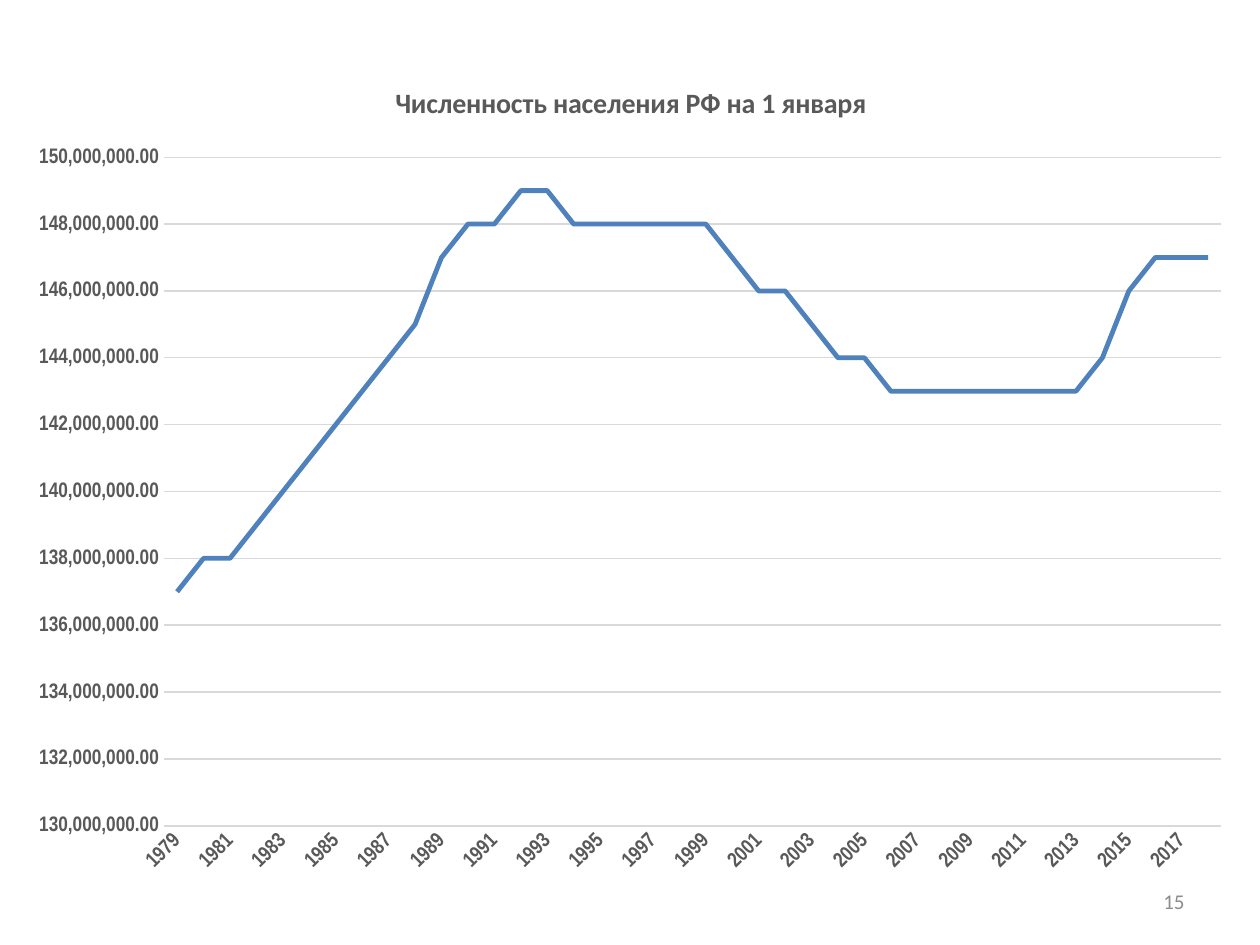
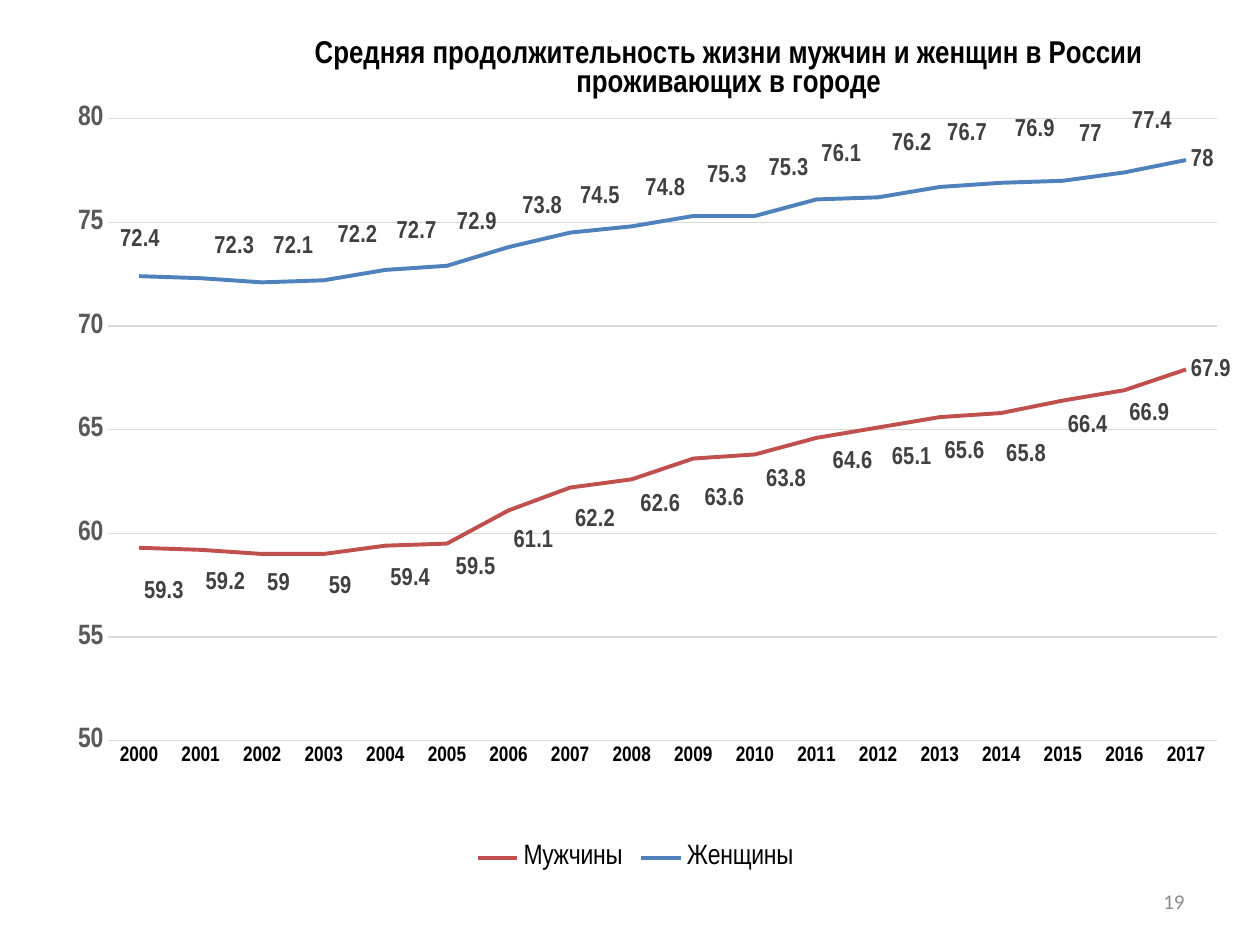
from dataclasses import dataclass

from lxml.etree import SubElement
from pptx import Presentation
from pptx.chart.data import CategoryChartData as Data
from pptx.dml.color import RGBColor
from pptx.enum.chart import XL_CHART_TYPE as Kind
from pptx.enum.chart import XL_LABEL_POSITION as Side
from pptx.enum.chart import XL_LEGEND_POSITION as Dock
from pptx.enum.chart import XL_TICK_MARK as Tick
from pptx.enum.text import MSO_ANCHOR as Anchor
from pptx.enum.text import PP_ALIGN as Align
from pptx.oxml.ns import qn
from pptx.util import Inches, Pt


@dataclass(frozen=True)
class Theme:
    body: str = "Calibri"
    narrow: str = "Arial Narrow"
    black: str = "000000"
    gray: str = "595959"
    dark: str = "404040"
    pale: str = "8C8C8C"
    grid: str = "D9D9D9"
    blue: str = "4F81BD"
    red: str = "C0504D"
    tiny: int = 10
    small: int = 12
    label: int = 14
    mid: int = 16
    large: int = 18


T = Theme()
C15 = "http://schemas.microsoft.com/office/drawing/2012/chart"
EXT = "{CE6537A1-D6FC-4f65-9D91-7224C49458BB}"

# Population in millions, from 1979 on
PEOPLE = [
    137, 138, 138, 139, 140, 141, 142, 143, 144, 145,
    147, 148, 148, 149, 149, 148, 148, 148, 148, 148,
    148, 147, 146, 146, 145, 144, 144, 143, 143, 143,
    143, 143, 143, 143, 143, 144, 146, 147, 147, 147,
]

MEN = [59.3, 59.2, 59, 59, 59.4, 59.5, 61.1, 62.2, 62.6,
       63.6, 63.8, 64.6, 65.1, 65.6, 65.8, 66.4, 66.9, 67.9]
WOMEN = [72.4, 72.3, 72.1, 72.2, 72.7, 72.9, 73.8, 74.5, 74.8,
         75.3, 75.3, 76.1, 76.2, 76.7, 76.9, 77, 77.4, 78]

# Label shifts in inches (across, down); the last label stays in place
MEN_SHIFT = [
    (0, .35), (0, .26), (0, .24), (0, .26), (0, .26), (.03, .19),
    (0, .24), (0, .26), (.03, .2), (.05, .32), (.05, .2), (.09, .19),
    (.07, .24), (0, .28), (0, .33), (0, .2), (0, .19),
]
WOMEN_SHIFT = [
    (-.19, -.29), (.07, -.25), (.05, -.28), (.07, -.35), (.05, -.3), (.04, -.34),
    (.07, -.32), (.04, -.28), (.07, -.3), (.07, -.32), (.07, -.37), (0, -.35),
    (.07, -.42), (.02, -.42), (.07, -.42), (.09, -.36), (.02, -.4),
]


def style(font, size, color, bold=False, face=T.narrow):
    font.size, font.bold, font.name = Pt(size), bold, face
    font.color.rgb = RGBColor.from_string(color)


def stroke(line, color, width):
    line.color.rgb = RGBColor.from_string(color)
    line.width = Pt(width)


def place(node, index, inner=False, edge=True, **parts):
    """Give a chart part a manual layout, in fractions of the chart."""
    for old in node.findall(qn("c:layout")):
        node.remove(old)
    layout = SubElement(node, qn("c:layout"))
    node.insert(index, layout)
    manual = SubElement(layout, qn("c:manualLayout"))
    if inner:
        SubElement(manual, qn("c:layoutTarget")).set("val", "inner")
    if edge:
        for name in ("xMode", "yMode"):
            SubElement(manual, qn(f"c:{name}")).set("val", "edge")
    for name, value in parts.items():
        SubElement(manual, qn(f"c:{name}")).set("val", f"{value:.4f}")


def add_title(chart, lines, size, color, face, x, y):
    chart.has_title = True
    frame = chart.chart_title.text_frame
    frame.text = "\n".join(lines)
    for para in frame.paragraphs:
        para.alignment = Align.CENTER
        style(para.runs[0].font, size, color, True, face)
    place(chart.chart_title._element, 1, x=x, y=y)


def set_axes(chart, low, high, step, size, form, ink, width):
    years, scale = chart.category_axis, chart.value_axis
    for axis in (years, scale):
        axis.major_tick_mark = axis.minor_tick_mark = Tick.NONE
    style(years.tick_labels.font, T.small, ink, True)
    stroke(years.format.line, T.grid, width)
    style(scale.tick_labels.font, size, T.gray, True)
    scale.tick_labels.number_format = form
    scale.tick_labels.number_format_is_linked = False
    scale.minimum_scale, scale.maximum_scale = low, high
    scale.major_unit = step
    scale.format.line.fill.background()
    stroke(scale.major_gridlines.format.line, T.grid, .75)


def add_lines(slide, box, first, rows, width):
    """Add a line chart whose rows are (name, values, color)."""
    data = Data()
    data.categories = [str(first + i) for i in range(len(rows[0][1]))]
    for name, values, _ in rows:
        data.add_series(name, values)
    chart = slide.shapes.add_chart(Kind.LINE, *map(Inches, box), data).chart
    style(chart.font, T.tiny, T.black, face=T.body)
    chart.has_legend = False
    chart.plots[0].vary_by_categories = False
    for line, (_, _, color) in zip(chart.plots[0].series, rows):
        line.smooth = False
        stroke(line.format.line, color, width)
    return chart


def hide_leaders(labels):
    """Turn off the lines that join moved labels to their points."""
    for flag in labels.findall(qn("c:showLeaderLines")):
        flag.set("val", "0")
    group = SubElement(labels, qn("c:extLst"))
    ext = SubElement(group, qn("c:ext"), nsmap={"c15": C15})
    ext.set("uri", EXT)
    SubElement(ext, f"{{{C15}}}showLeaderLines").set("val", "0")


def add_labels(line, shifts, box):
    labels = line.data_labels
    labels.show_value, labels.position = True, Side.RIGHT
    style(labels.font, T.label, T.dark, True)
    for i in range(len(shifts)):
        label = line.points[i].data_label
        style(label.font, T.label, T.dark, True)
        label.position = Side.RIGHT
    group = line._element.find(qn("c:dLbls"))
    for node, (dx, dy) in zip(group.findall(qn("c:dLbl")), shifts):
        place(node, 1, edge=False, x=dx / box[2], y=dy / box[3])
    hide_leaders(group)


def add_number(slide, number):
    box = slide.shapes.add_textbox(*map(Inches, (7.17, 6.95, 2.33, .4)))
    frame = box.text_frame
    frame.word_wrap, frame.vertical_anchor = True, Anchor.MIDDLE
    frame.text = str(number)
    para = frame.paragraphs[0]
    para.alignment = Align.RIGHT
    style(para.runs[0].font, T.small, T.pale, face=T.body)


def draw_people(slide, box):
    values = [value * 1_000_000 for value in PEOPLE]
    chart = add_lines(slide, box, 1979, [("Численность", values, T.blue)], 2.75)
    add_title(chart, ["Численность населения РФ на 1 января"],
              T.mid, T.gray, T.body, .305, .027)
    set_axes(chart, 130e6, 150e6, 2e6, T.small, "#,##0.00", T.gray, 1)
    axis = chart.category_axis._element
    axis.find(f"{qn('c:txPr')}/{qn('a:bodyPr')}").set("rot", "-2700000")
    skip = SubElement(axis, qn("c:tickLblSkip"))
    skip.set("val", "2")
    axis.find(qn("c:noMultiLvlLbl")).addprevious(skip)
    place(chart._chartSpace.chart.plotArea, 0, True,
          x=.121, y=.121, w=.86, h=.804)


def draw_lives(slide, box):
    rows = [("Мужчины", MEN, T.red), ("Женщины", WOMEN, T.blue)]
    chart = add_lines(slide, box, 2000, rows, 2.25)
    add_title(chart, ["Средняя продолжительность жизни мужчин и женщин в России",
                      "проживающих в городе"],
              T.large, T.black, T.narrow, .234, .022)
    set_axes(chart, 50, 80, 5, T.mid, "General", T.black, .75)
    for line, shifts in zip(chart.plots[0].series, (MEN_SHIFT, WOMEN_SHIFT)):
        add_labels(line, shifts, box)
    chart.has_legend = True
    chart.legend.position = Dock.BOTTOM
    chart.legend.include_in_layout = False
    style(chart.legend.font, T.mid, T.black)
    place(chart._chartSpace.chart.plotArea, 0, True,
          x=.068, y=.119, w=.908, h=.724)


def main():
    deck = Presentation()
    deck.slide_width, deck.slide_height = Inches(10), Inches(7.5)
    pages = [
        (15, draw_people, (.12, .45, 9.76, 6.6)),
        (19, draw_lives, (.2, .13, 9.69, 6.82)),
    ]
    for number, draw, box in pages:
        slide = deck.slides.add_slide(deck.slide_layouts[6])
        add_number(slide, number)
        draw(slide, box)
    deck.save("out.pptx")


if __name__ == "__main__":
    main()
